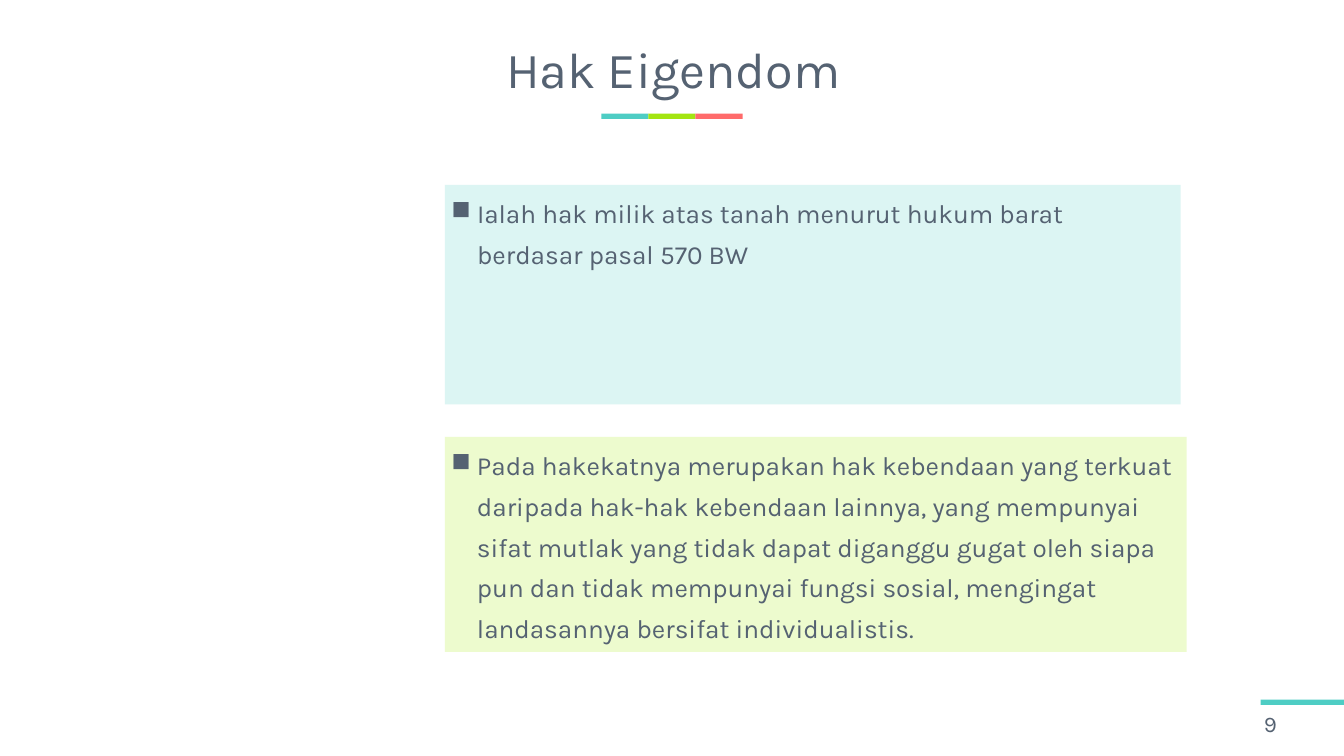
import pptx
import pptx.dml.color
import pptx.enum.shapes
import pptx.enum.text
import pptx.oxml.ns
import pptx.util
import lxml.etree

RGB = pptx.dml.color.RGBColor
SLATE = RGB(0x55, 0x62, 0x72)
TEAL = RGB(0x4E, 0xCD, 0xC4)
LIME = RGB(0xA3, 0xE5, 0x11)
CORAL = RGB(0xFF, 0x6B, 0x6B)
PALE_TEAL = RGB(0xDC, 0xF5, 0xF3)
PALE_LIME = RGB(0xED, 0xFB, 0xCE)

ALIGN = pptx.enum.text.PP_ALIGN
ANCHOR = pptx.enum.text.MSO_ANCHOR
PX = 9144  # EMU per px, 100 px to the inch


class Deck:
    """Holds the text style and the current slide; lengths are in px."""

    font = "Karla"
    color = SLATE

    def __init__(self, width, height):
        self.prs = pptx.Presentation()
        self.prs.slide_width, self.prs.slide_height = width * PX, height * PX
        self.slide = None

    def add_slide(self):
        self.slide = self.prs.slides.add_slide(self.prs.slide_layouts[5])

    def set_text(self, sp, text, size, anchor, align=ALIGN.LEFT, spacing=1.0):
        tf = sp.text_frame
        tf.word_wrap = True
        tf.auto_size = pptx.enum.text.MSO_AUTO_SIZE.NONE
        tf.vertical_anchor = anchor
        tf.text = text
        p = tf.paragraphs[0]
        p.alignment = align
        p.line_spacing = spacing
        r = p.runs[0]
        r.font.name = self.font
        r.font.size = pptx.util.Pt(size)
        r.font.color.rgb = self.color
        return p

    def title(self, text, x, y, w, h):
        sp = self.slide.shapes.title
        sp.left, sp.top, sp.width, sp.height = (v * PX for v in (x, y, w, h))
        self.set_text(sp, text, 54, ANCHOR.MIDDLE, ALIGN.CENTER, 0.9)

    def rect(self, x, y, w, h, fill):
        sp = self.slide.shapes.add_shape(
            pptx.enum.shapes.MSO_SHAPE.RECTANGLE, x * PX, y * PX, w * PX, h * PX)
        sp.shadow.inherit = False
        sp.fill.solid()
        sp.fill.fore_color.rgb = fill
        sp.line.fill.background()
        return sp

    def bullet_panel(self, text, x, y, w, h, fill, indent=38):
        sp = self.rect(x, y, w, h, fill)
        p = self.set_text(sp, text, 28, ANCHOR.TOP, spacing=1.3)
        pPr = p._p.get_or_add_pPr()
        pPr.set("marL", str(indent * PX))
        pPr.set("indent", str(-indent * PX))
        bullet = lxml.etree.SubElement(pPr, pptx.oxml.ns.qn("a:buChar"))
        bullet.set("char", "■")

    def label(self, text, x, y, w, h):
        sp = self.slide.shapes.add_textbox(x * PX, y * PX, w * PX, h * PX)
        self.set_text(sp, text, 24, ANCHOR.MIDDLE)


def main():
    deck = Deck(2000, 1125)
    deck.add_slide()

    for i, fill in enumerate((TEAL, LIME, CORAL)):
        deck.rect(895 + i * 70, 169, 70, 8, fill)
    deck.rect(1876, 1041, 124, 8, TEAL)

    deck.title("Hak Eigendom", 54, 38, 1896, 140)
    deck.label("9", 1871, 1050, 129, 53)

    deck.bullet_panel(
        "Ialah hak milik atas tanah menurut hukum barat berdasar pasal 570 BW",
        662, 275, 1095, 327, PALE_TEAL)
    deck.bullet_panel(
        "Pada hakekatnya merupakan hak kebendaan yang terkuat daripada hak-hak "
        "kebendaan lainnya, yang mempunyai sifat mutlak yang tidak dapat diganggu "
        "gugat oleh siapa pun dan tidak mempunyai fungsi sosial, mengingat "
        "landasannya bersifat individualistis.",
        662, 650, 1104, 320, PALE_LIME)

    deck.prs.save("out.pptx")


if __name__ == "__main__":
    main()
